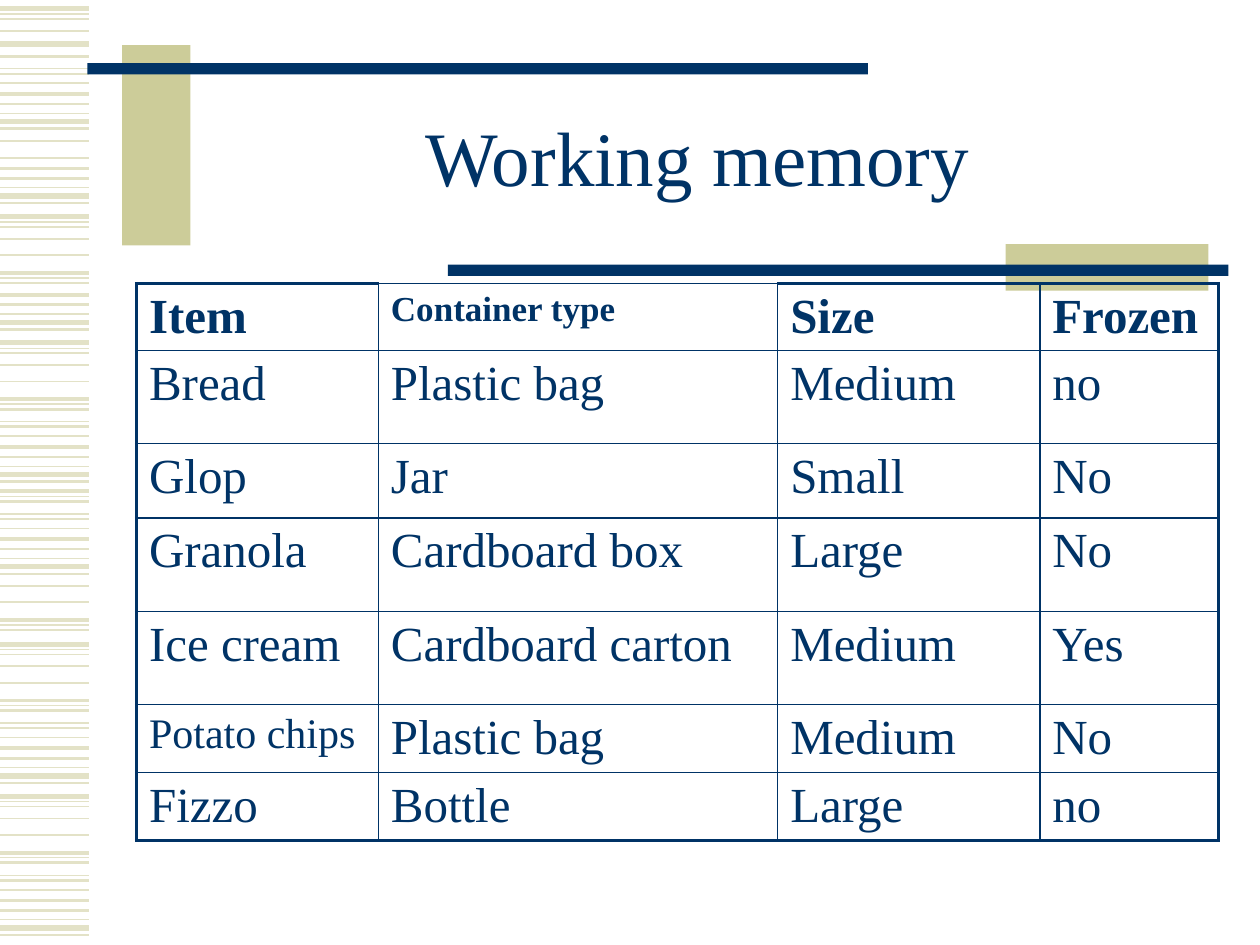
from lxml import etree
from pptx import Presentation
from pptx.dml.color import RGBColor
from pptx.enum.shapes import MSO_CONNECTOR, MSO_SHAPE
from pptx.enum.text import MSO_ANCHOR, MSO_AUTO_SIZE, PP_ALIGN
from pptx.oxml.ns import qn
from pptx.util import Pt

NAVY = RGBColor(0x00, 0x33, 0x66)
KHAKI = RGBColor(0xCC, 0xCC, 0x99)
PALE_KHAKI = RGBColor(0xE3, 0xE2, 0xC7)
STRAIGHT = MSO_CONNECTOR.STRAIGHT
RECTANGLE = MSO_SHAPE.RECTANGLE
LEFT, CENTER = PP_ALIGN.LEFT, PP_ALIGN.CENTER
TOP, MIDDLE = MSO_ANCHOR.TOP, MSO_ANCHOR.MIDDLE
NO_AUTOFIT = MSO_AUTO_SIZE.NONE

STRIPE_MOTIF = [
    (0, 3), (3.1, 0.75), (5.9, 1), (12.7, 1),
    (22.1, 1), (32.2, 2.25), (35, 0.75), (38, 1.5),
    (45.1, 0.75), (48, 1.5), (53.4, 1), (59.6, 2.25),
    (65.2, 1.5), (70.6, 0.75), (75.3, 3), (79.4, 1.5),
]
STRIPE_RUNS = [
    (5, 0, 4), (25.2, 0, 1), (-5.8, 7, 16), (58.5, 4, 5),
    (36.7, 10, 16), (123.8, 0, 8), (108.8, 11, 16), (195.9, 0, 16),
    (248.6, 5, 16), (322.1, 3, 8), (368.1, 0, 16), (455, 0, 16),
]
GROCERIES = [
    ["Item", "Container type", "Size", "Frozen"],
    ["Bread", "Plastic bag", "Medium", "no"],
    ["Glop", "Jar", "Small", "No"],
    ["Granola", "Cardboard box", "Large", "No"],
    ["Ice cream", "Cardboard carton", "Medium", "Yes"],
    ["Potato chips", "Plastic bag", "Medium", "No"],
    ["Fizzo", "Bottle", "Large", "no"],
]
COLUMN_WIDTHS = [138.2, 228.2, 149.8, 102.2]
ROW_HEIGHTS = [36, 53.3, 42.5, 53.3, 53.3, 38.9, 38.9]
SMALLER_SIZES = {"Container type": 20, "Potato chips": 24}


def write(frame, text, size=28, bold=False, align=LEFT, spacing=1.0):
    para = frame.paragraphs[0]
    para.alignment = align
    para.line_spacing = spacing
    span = para.add_run()
    span.text = text
    span.font.name = "Times New Roman"
    span.font.size = Pt(size)
    span.font.bold = bold
    span.font.color.rgb = NAVY


class SlideBuilder:
    def __init__(self, page, thin=1, thick=2.25):
        self.page = page
        self.thin = thin
        self.thick = thick

    def title(self, text, left, top, width, height):
        box = self.page.shapes.title
        box.left, box.top = Pt(left), Pt(top)
        box.width, box.height = Pt(width), Pt(height)
        box.text_frame.word_wrap = True
        box.text_frame.auto_size = NO_AUTOFIT
        box.text_frame.vertical_anchor = MIDDLE
        write(box.text_frame, text, size=44, align=CENTER, spacing=0.85)

    def stripe(self, top, width, weight):
        line = self.page.shapes.add_connector(STRAIGHT, 0, Pt(top), Pt(width), Pt(top))
        line.line.color.rgb = PALE_KHAKI
        line.line.width = Pt(weight)
        etree.SubElement(line._element.spPr, qn("a:effectLst"))

    def bar(self, left, top, width, height, color):
        box = self.page.shapes.add_shape(RECTANGLE, Pt(left), Pt(top), Pt(width), Pt(height))
        box.shadow.inherit = False
        box.fill.solid()
        box.fill.fore_color.rgb = color
        box.line.fill.background()

    def border(self, cell, side, weight):
        properties = cell._tc.get_or_add_tcPr()
        edge = etree.SubElement(properties, qn(f"a:ln{side}"), w=str(Pt(weight)))
        fill = etree.SubElement(edge, qn("a:solidFill"))
        etree.SubElement(fill, qn("a:srgbClr"), val=str(NAVY))

    def table(self, rows, left, top, widths, heights):
        table = self.page.shapes.add_table(
            len(rows), len(widths), Pt(left), Pt(top), Pt(sum(widths)), Pt(sum(heights))
        ).table
        table.first_row = False
        table.horz_banding = False
        for column, width in zip(table.columns, widths):
            column.width = Pt(width)
        for row, height in zip(table.rows, heights):
            row.height = Pt(height)
        for i, texts in enumerate(rows):
            for j, text in enumerate(texts):
                cell = table.cell(i, j)
                outer_sides = {
                    "L": j == 0,
                    "R": j == len(widths) - 1,
                    "T": i == 0 and j != 1,
                    "B": i == len(rows) - 1,
                }
                for side, outer in outer_sides.items():
                    self.border(cell, side, self.thick if outer else self.thin)
                cell.fill.background()
                cell.vertical_anchor = TOP
                write(cell.text_frame, text, size=SMALLER_SIZES.get(text, 28), bold=i == 0)


def main():
    deck = Presentation()
    deck.slide_width, deck.slide_height = Pt(720), Pt(540)
    builder = SlideBuilder(deck.slides.add_slide(deck.slide_layouts[5]))

    for origin, first, end in STRIPE_RUNS:
        for offset, weight in STRIPE_MOTIF[first:end]:
            builder.stripe(origin + offset, 51, weight)

    builder.bar(69.8, 25.8, 39, 114.5, KHAKI)
    builder.bar(50, 36, 446, 6.5, NAVY)
    builder.bar(574.6, 139.5, 116, 26.6, KHAKI)
    builder.bar(256, 151.2, 446, 6.5, NAVY)
    builder.title("Working memory", 108, 48, 581, 90)
    builder.table(GROCERIES, 78, 162, COLUMN_WIDTHS, ROW_HEIGHTS)
    deck.save("out.pptx")


if __name__ == "__main__":
    main()
